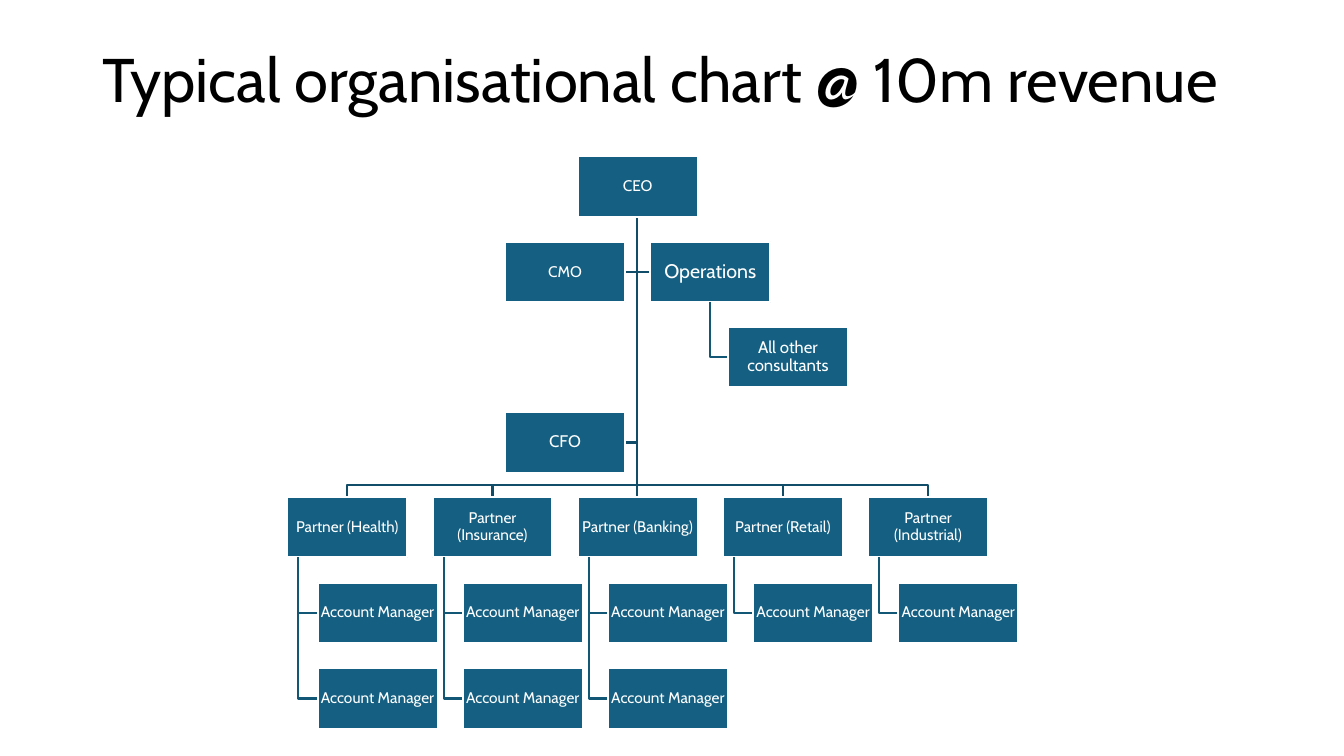
from pptx import Presentation
from pptx.dml.color import RGBColor
from pptx.enum.shapes import MSO_CONNECTOR, MSO_SHAPE
from pptx.enum.text import MSO_ANCHOR, PP_ALIGN
from pptx.oxml.ns import qn
from pptx.util import Inches, Pt
from lxml.etree import SubElement

FONT = "Cabin"
BLUE, TRUNK, BRANCH, WHITE, BLACK = "156082", "114D68", "135776", "FFFFFF", "000000"
WIDE, HIGH = 1.19, 0.6
MID = 6.32                                         # centre line of the chart
ROWS = (1.55, 2.4, 3.24, 4.09, 4.93, 5.78, 6.63)   # top of each level
LEFT, STEP = 2.85, 1.44                            # partner columns
BUS = 4.81                                         # bar above the partners

# Partner and number of account managers
TEAMS = (("Health", 2), ("Insurance", 2), ("Banking", 2),
         ("Retail", 1), ("Industrial", 1))

# Staff roles: name, left, row, text size
STAFF = (("CMO", 5.01, 1, 11), ("Operations", 6.45, 1, 14), ("CFO", 5.01, 3, 12))


def color(code):
    return RGBColor.from_string(code)


def outline(shape, code):
    shape.line.color.rgb = color(code)
    shape.line.width = Pt(1.5)


def write(frame, text, size, code, align):
    frame.word_wrap = True
    frame.vertical_anchor = MSO_ANCHOR.MIDDLE
    para = frame.paragraphs[0]
    para.text = text
    para.alignment = align
    para.line_spacing = 0.9
    para.font.name = FONT
    para.font.size = Pt(size)
    para.font.color.rgb = color(code)


def add_title(slide, text):
    box = slide.shapes.add_textbox(Inches(0.92), Inches(0.09), Inches(11.5), Inches(1.45))
    write(box.text_frame, text, 44, BLACK, PP_ALIGN.LEFT)


def add_box(slide, text, left, row, size=11):
    box = slide.shapes.add_shape(MSO_SHAPE.RECTANGLE, Inches(left), Inches(ROWS[row]),
                                 Inches(WIDE), Inches(HIGH))
    box.shadow.inherit = False
    box.fill.solid()
    box.fill.fore_color.rgb = color(BLUE)
    outline(box, WHITE)
    frame = box.text_frame
    frame.margin_left = frame.margin_right = Inches(0.01)
    frame.margin_top = frame.margin_bottom = Inches(0.01)
    write(frame, text, size, WHITE, PP_ALIGN.CENTER)


def add_bend(slide, points, code):
    first, *rest = [(Inches(x), Inches(y)) for x, y in points]
    pen = slide.shapes.build_freeform(*first)
    pen.add_line_segments(rest, close=False)
    bend = pen.convert_to_shape()
    bend.shadow.inherit = False
    bend.fill.background()
    outline(bend, code)


def add_trunk(slide, top, end):
    trunk = slide.shapes.add_connector(MSO_CONNECTOR.STRAIGHT, Inches(MID), Inches(top),
                                       Inches(MID), Inches(end))
    outline(trunk, TRUNK)
    SubElement(trunk._element.spPr, qn("a:effectLst"))


def add_elbow(slide, x, top, side, row, code):
    y = ROWS[row] + HIGH / 2
    add_bend(slide, [(x, top), (x, y), (side, y)], code)


def add_staff(slide, base):
    for name, left, row, size in STAFF:
        side = left if left > MID else left + WIDE
        add_elbow(slide, MID, base, side, row, TRUNK)
        add_box(slide, name, left, row, size)
    # Consultants below Operations
    add_elbow(slide, 7.04, ROWS[1] + HIGH, 7.22, 2, BRANCH)
    add_box(slide, "All other consultants", 7.22, 2, 12)


def add_team(slide, index, name, count, base):
    left = LEFT + index * STEP
    mid = left + WIDE / 2
    if index != len(TEAMS) // 2:      # the middle partner hangs on the trunk
        add_bend(slide, [(MID, base), (MID, BUS), (mid, BUS), (mid, ROWS[4])], TRUNK)
    add_box(slide, f"Partner ({name})", left, 4)
    for row in range(5, 5 + count):
        add_elbow(slide, left + 0.11, ROWS[4] + HIGH, left + 0.3, row, BRANCH)
        add_box(slide, "Account Manager", left + 0.3, row)


def main():
    deck = Presentation()
    deck.slide_width, deck.slide_height = Inches(13.33), Inches(7.5)
    slide = deck.slides.add_slide(deck.slide_layouts[6])
    add_title(slide, "Typical organisational chart @ 10m revenue")

    # Chart from the top down
    base = ROWS[0] + HIGH
    add_trunk(slide, base, ROWS[4])
    add_staff(slide, base)
    for index, (name, count) in enumerate(TEAMS):
        add_team(slide, index, name, count, base)
    add_box(slide, "CEO", 5.73, 0)

    deck.save("out.pptx")


if __name__ == "__main__":
    main()
